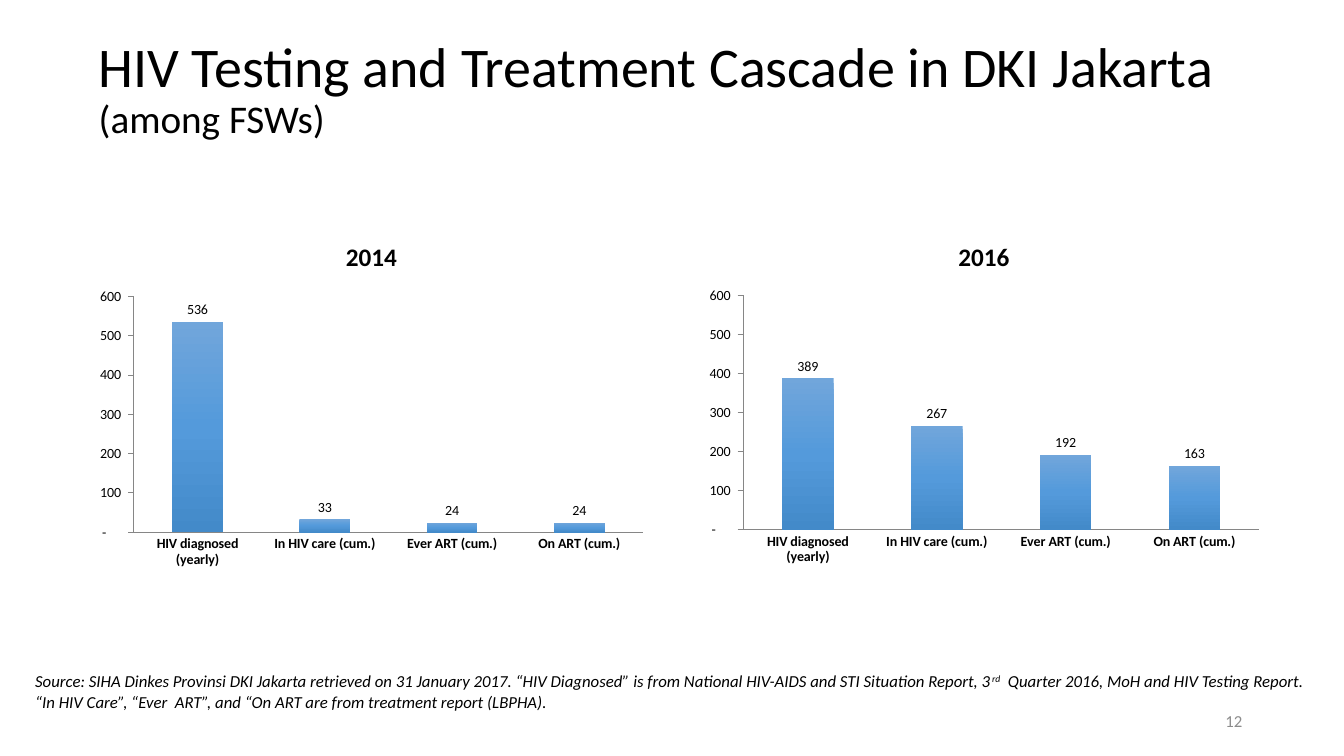
from copy import deepcopy

from lxml.etree import SubElement
from pptx import Presentation
from pptx.chart.data import CategoryChartData
from pptx.dml.color import RGBColor
from pptx.enum.chart import XL_CHART_TYPE, XL_LABEL_POSITION, XL_TICK_MARK
from pptx.enum.text import MSO_ANCHOR, PP_ALIGN
from pptx.oxml.ns import qn
from pptx.util import Inches, Pt

BLACK = RGBColor(0x00, 0x00, 0x00)
GREY = RGBColor(0x8C, 0x8C, 0x8C)
AXIS = RGBColor(0x86, 0x86, 0x86)
LIGHT = RGBColor(0x71, 0xA6, 0xDB)
BLUE = RGBColor(0x54, 0x9A, 0xDB)
DARK = RGBColor(0x43, 0x8A, 0xC9)

COUNT = '_(* #,##0_);_(* \\(#,##0\\);_(* "-"??_);_('
STEPS = ["HIV diagnosed (yearly)", "In HIV care (cum.)",
         "Ever ART (cum.)", "On ART (cum.)"]
PLOT = {"x": 0.08, "y": 0.21, "w": 0.9, "h": 0.67}
YEARS = [
    ("2014", [536, 33, 24, 24], (0.88, 2.21, 5.61, 3.49)),
    ("2016", [389, 267, 192, 163], (6.92, 2.21, 5.68, 3.46)),
]


def apply(target, values):
    for name, value in values.items():
        setattr(target, name, value)


class Page:
    face = "Calibri"

    def __init__(self, deck):
        self.slide = deck.slides.add_slide(deck.slide_layouts[6])

    def style(self, font, size, color=BLACK, **extra):
        apply(font, {"name": self.face, "size": Pt(size), **extra})
        font.color.rgb = color

    def text(self, box, frame=None, para=None):
        shape = self.slide.shapes.add_textbox(*map(Inches, box))
        body = shape.text_frame
        apply(body, {"word_wrap": True, **(frame or {})})
        line = body.paragraphs[0]
        apply(line, para or {})
        return line

    def run(self, line, words, size, color=BLACK, raised=False, **extra):
        run = line.add_run()
        run.text = words
        self.style(run.font, size, color, **extra)
        if raised:
            run._r.get_or_add_rPr().set("baseline", "30000")

    def layout(self, chart):
        plot = chart._chartSpace.find(".//" + qn("c:plotArea"))
        for old in plot.findall(qn("c:layout")):
            plot.remove(old)
        frame = SubElement(plot, qn("c:layout"))
        plot.insert(0, frame)
        manual = SubElement(frame, qn("c:manualLayout"))
        marks = {"layoutTarget": "inner", "xMode": "edge", "yMode": "edge"}
        for name, value in {**marks, **PLOT}.items():
            SubElement(manual, qn("c:" + name)).set("val", str(value))

    def shade(self, series):
        fill = series.format.fill
        fill.gradient()
        fill.gradient_angle = 270
        stops = series._element.find(".//" + qn("a:gsLst"))
        stops.insert(1, deepcopy(stops[0]))
        for stop, place, color in zip(fill.gradient_stops, (0, 0.5, 1),
                                      (LIGHT, BLUE, DARK)):
            stop.position = place
            stop.color.rgb = color

    def chart(self, year, counts, box):
        data = CategoryChartData()
        data.categories = STEPS
        data.add_series(year, counts)
        chart = self.slide.shapes.add_chart(
            XL_CHART_TYPE.COLUMN_CLUSTERED, *map(Inches, box), data).chart
        apply(chart, {"has_legend": False, "has_title": True})
        self.style(chart.font, 10)
        title = chart.chart_title.text_frame.paragraphs[0]
        self.run(title, year, 18, bold=True)

        plot = chart.plots[0]
        apply(plot, {"gap_width": 150, "overlap": -25,
                     "vary_by_categories": False, "has_data_labels": True})
        apply(plot.data_labels, {
            "show_value": True, "number_format": COUNT,
            "number_format_is_linked": False,
            "position": XL_LABEL_POSITION.OUTSIDE_END})
        self.style(plot.data_labels.font, 10)
        self.shade(plot.series[0])

        steps, scale = chart.category_axis, chart.value_axis
        apply(steps, {"major_tick_mark": XL_TICK_MARK.NONE})
        apply(scale, {"major_tick_mark": XL_TICK_MARK.OUTSIDE,
                      "minimum_scale": 0, "maximum_scale": 600,
                      "major_unit": 100})
        apply(scale.tick_labels, {"number_format": COUNT,
                                  "number_format_is_linked": False})
        for axis, bold in ((steps, True), (scale, False)):
            axis.has_major_gridlines = False
            axis.format.line.color.rgb = AXIS
            axis.format.line.width = Pt(0.75)
            self.style(axis.tick_labels.font, 10, bold=bold)
        self.layout(chart)


def main():
    deck = Presentation()
    apply(deck, {"slide_width": Inches(13.33), "slide_height": Inches(7.5)})
    page = Page(deck)
    middle = {"vertical_anchor": MSO_ANCHOR.MIDDLE}

    title = page.text((0.88, 0, 11.71, 1.79), middle, {"line_spacing": 0.9})
    page.run(title, "HIV Testing and Treatment Cascade in DKI Jakarta", 40)
    title.add_line_break()
    page.run(title, "(among FSWs)", 28)

    number = page.text((9.42, 6.95, 3, 0.4), middle,
                       {"alignment": PP_ALIGN.RIGHT})
    page.run(number, "12", 12, GREY)

    source = page.text((0.25, 6.61, 12.88, 0.5))
    page.run(source, "Source: SIHA Dinkes Provinsi DKI Jakarta retrieved on "
             "31 January 2017. “HIV Diagnosed” is from National HIV-AIDS "
             "and STI Situation Report, 3", 12, italic=True)
    page.run(source, "rd", 12, raised=True, italic=True)
    page.run(source, "  Quarter 2016, MoH and HIV Testing Report. “In HIV "
             "Care”, “Ever  ART”, and “On ART are from treatment report "
             "(LBPHA).", 12, italic=True)

    for year in YEARS:
        page.chart(*year)
    deck.save("out.pptx")


if __name__ == "__main__":
    main()
